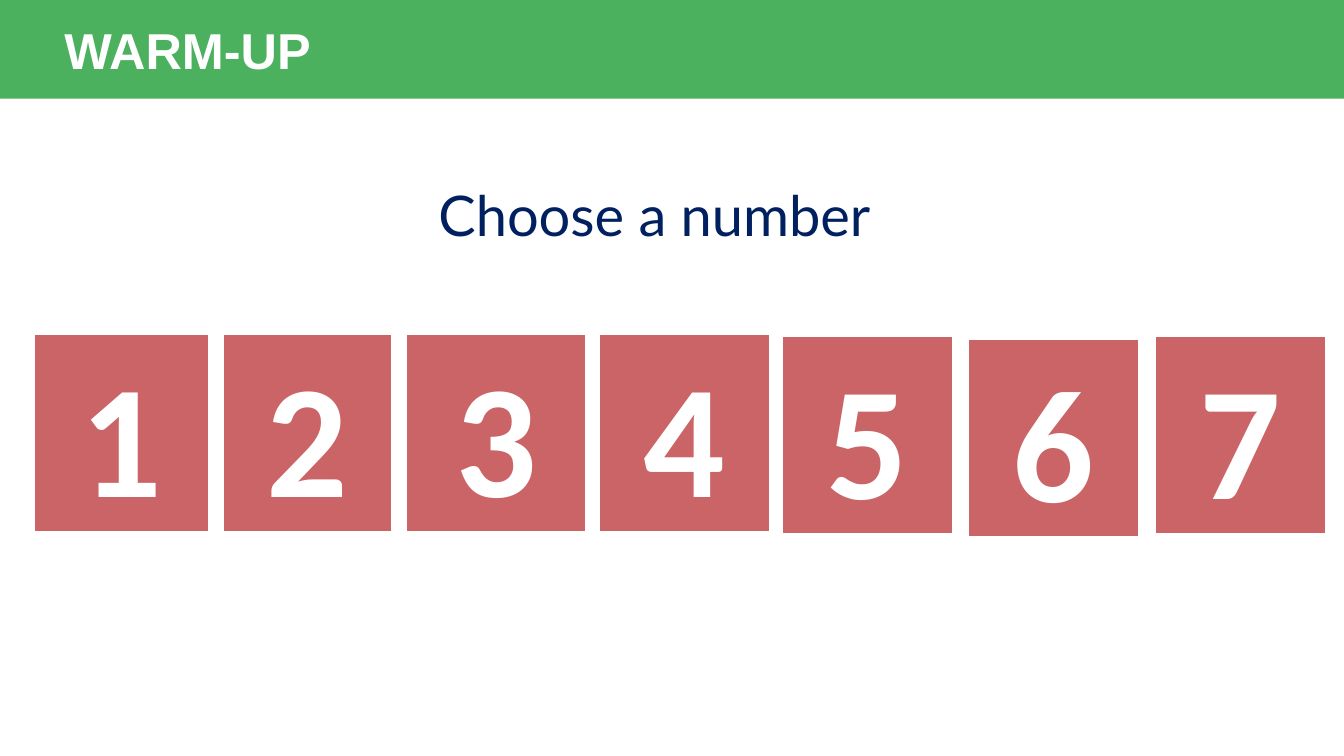
from dataclasses import dataclass

from pptx import Presentation
from pptx.dml.color import RGBColor
from pptx.enum.shapes import MSO_SHAPE
from pptx.enum.text import MSO_ANCHOR, MSO_AUTO_SIZE, PP_ALIGN
from pptx.shapes.autoshape import Shape
from pptx.slide import Slide
from pptx.text.text import _Paragraph
from pptx.util import Emu, Pt

RECTANGLE = MSO_SHAPE.RECTANGLE
MIDDLE = MSO_ANCHOR.MIDDLE
FIT_SHAPE = MSO_AUTO_SIZE.SHAPE_TO_FIT_TEXT
CENTER = PP_ALIGN.CENTER
BLANK_LAYOUT = 6
EMU_PER_PX = 9144  # 100 px to the inch


@dataclass(frozen=True)
class TextStyle:
    font: str
    size: int
    color: RGBColor
    bold: bool = False


@dataclass(frozen=True)
class Theme:
    white: RGBColor = RGBColor(0xFF, 0xFF, 0xFF)
    banner: RGBColor = RGBColor(0x4C, 0xB1, 0x5F)
    tile: RGBColor = RGBColor(0xCB, 0x64, 0x66)
    navy: RGBColor = RGBColor(0x00, 0x20, 0x60)
    title: TextStyle = TextStyle("Arial", 36, white, True)
    prompt: TextStyle = TextStyle("Lato", 40, navy)
    number: TextStyle = TextStyle("Calibri", 115, white, True)


@dataclass(frozen=True)
class Box:
    left: int
    top: int
    width: int
    height: int

    def emu(self) -> tuple[Emu, Emu, Emu, Emu]:
        return px(self.left), px(self.top), px(self.width), px(self.height)


@dataclass(frozen=True)
class Label:
    text: str
    box: Box
    style: TextStyle


THEME = Theme()
PAGE_WIDTH, PAGE_HEIGHT = 1333, 750
TILE_HEIGHT = 196
BANNER = Box(0, 0, PAGE_WIDTH, 98)
LABELS = (
    Label("WARM-UP", Box(54, 14, 500, 71), THEME.title),
    Label("Choose a number", Box(425, 174, 908, 77), THEME.prompt),
)
TILES = (
    Box(34, 332, 173, TILE_HEIGHT),
    Box(221, 332, 168, TILE_HEIGHT),
    Box(403, 332, 178, TILE_HEIGHT),
    Box(594, 332, 169, TILE_HEIGHT),
    Box(776, 334, 169, TILE_HEIGHT),
    Box(960, 337, 169, TILE_HEIGHT),
    Box(1146, 334, 169, TILE_HEIGHT),
)


def px(length: int) -> Emu:
    return Emu(length * EMU_PER_PX)


def write(para: _Paragraph, text: str, style: TextStyle) -> None:
    para.text = text
    para.font.name = style.font
    para.font.size = Pt(style.size)
    para.font.bold = style.bold
    para.font.color.rgb = style.color


def add_rectangle(page: Slide, box: Box, fill: RGBColor) -> Shape:
    shape = page.shapes.add_shape(RECTANGLE, *box.emu())
    shape.shadow.inherit = False
    shape.fill.solid()
    shape.fill.fore_color.rgb = fill
    shape.line.fill.background()
    return shape


def add_label(page: Slide, label: Label) -> None:
    frame = page.shapes.add_textbox(*label.box.emu()).text_frame
    frame.word_wrap = True
    frame.auto_size = FIT_SHAPE
    write(frame.paragraphs[0], label.text, label.style)


def add_tile(page: Slide, number: int, box: Box) -> None:
    tile = add_rectangle(page, box, THEME.tile)
    tile.line.color.rgb = THEME.white
    tile.line.width = Pt(1)
    tile.text_frame.vertical_anchor = MIDDLE
    para = tile.text_frame.paragraphs[0]
    para.alignment = CENTER
    write(para, str(number), THEME.number)


def main() -> None:
    deck = Presentation()
    deck.slide_width, deck.slide_height = px(PAGE_WIDTH), px(PAGE_HEIGHT)
    page = deck.slides.add_slide(deck.slide_layouts[BLANK_LAYOUT])

    # Banner, title and prompt
    add_rectangle(page, BANNER, THEME.banner)
    for label in LABELS:
        add_label(page, label)

    # Numbered tiles
    for number, box in enumerate(TILES, start=1):
        add_tile(page, number, box)

    deck.save("out.pptx")


if __name__ == "__main__":
    main()
